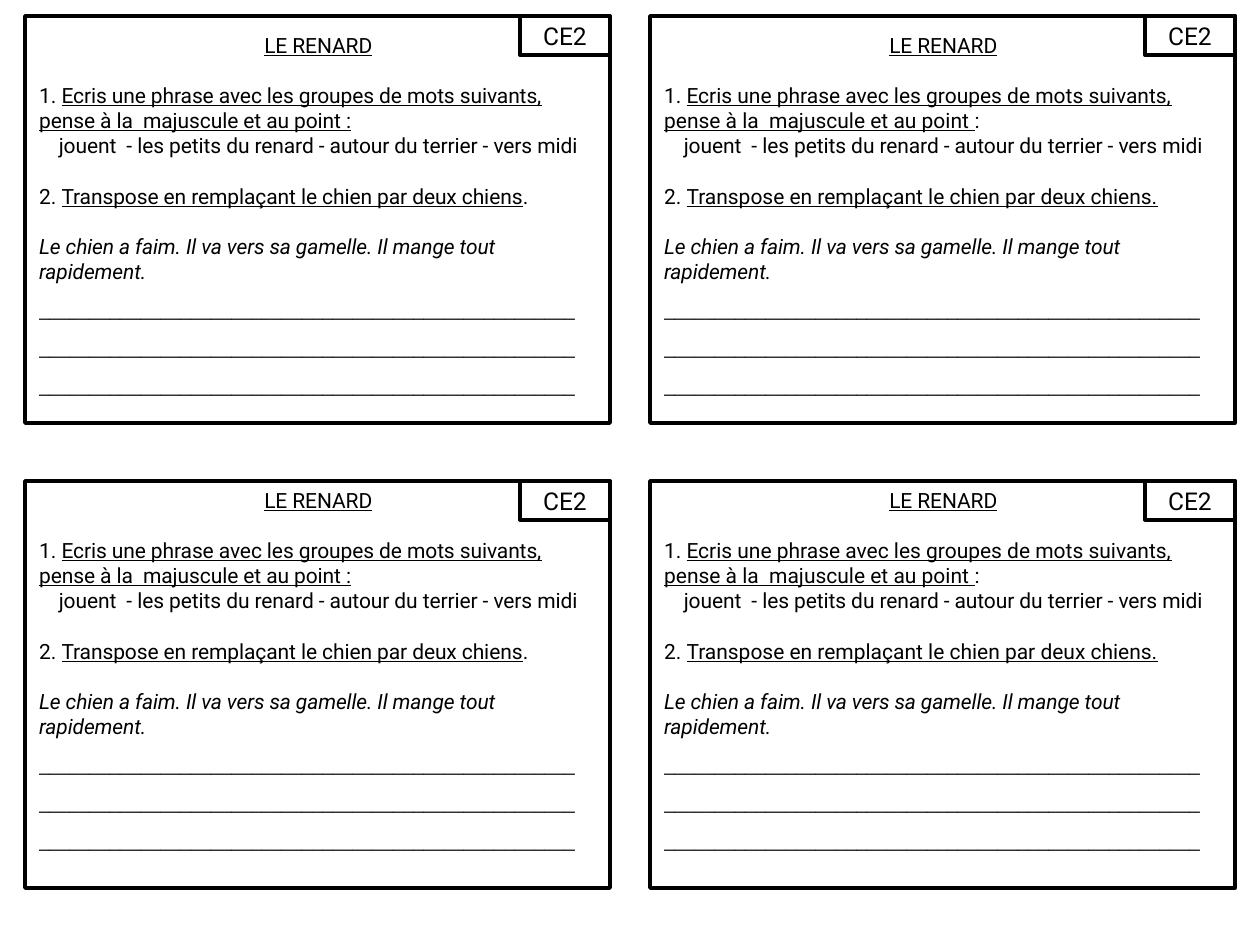
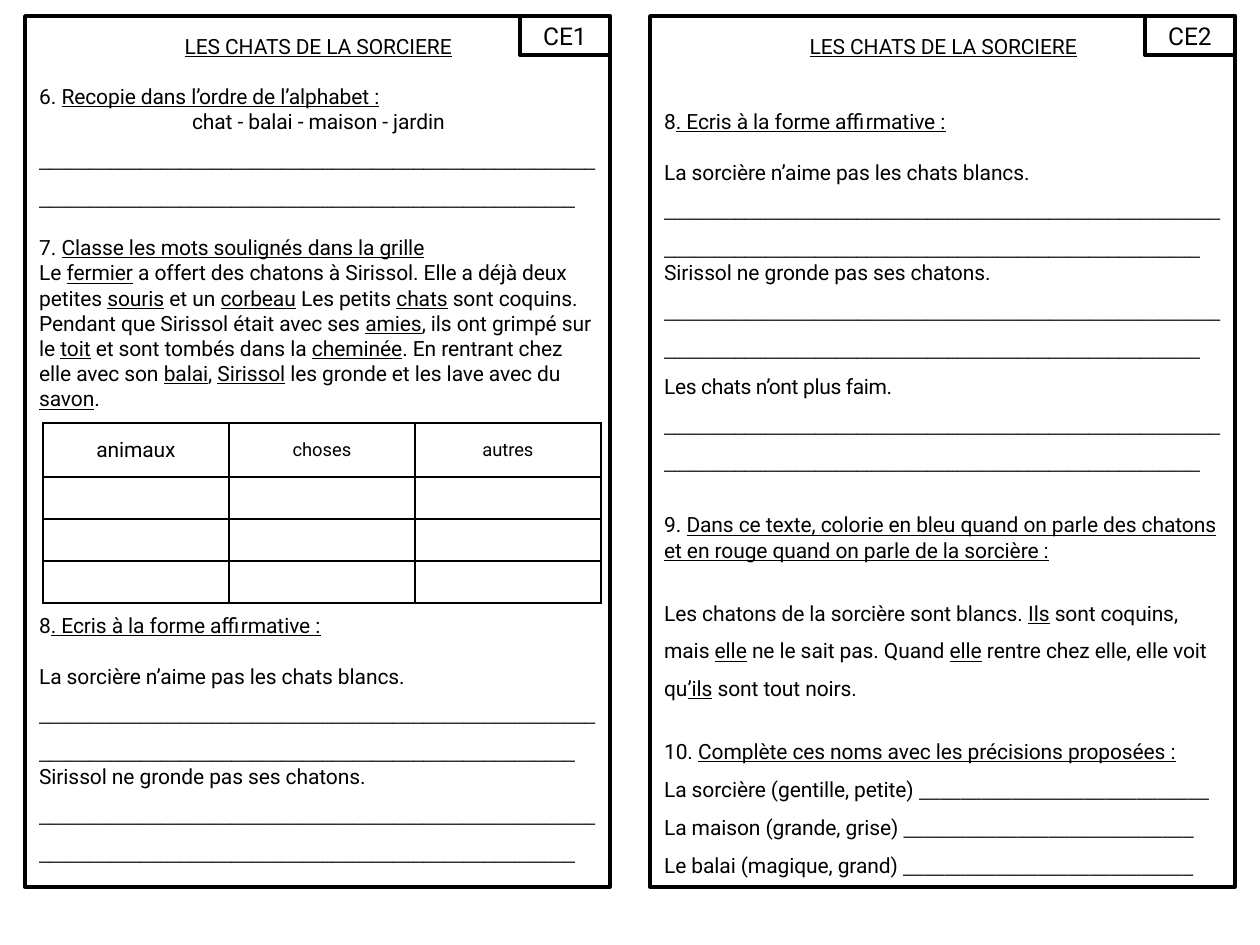
from itertools import groupby

from lxml import etree
from pptx import Presentation
from pptx import util as u
from pptx.dml.color import RGBColor
from pptx.enum import shapes, text
from pptx.oxml.ns import qn

# Content: [..] is underlined, {..} is underlined without tightened spacing.
# Each paragraph is (style, text, blank lines left above it).
SHORT_RULE = "_" * 53
LONG_RULE = "_" * 108
BLANK = "_" * 28


def fox_exercise(instruction, transposition):
    return [
        ("center", "[LE RENARD]", 0),
        ("body", instruction, 1),
        ("center", "jouent  - les petits du renard - autour du terrier - vers midi", 0),
        ("body", transposition, 1),
        ("italic", "Le chien a faim. Il va vers sa gamelle. Il mange tout rapidement.", 1),
    ] + [("rule", SHORT_RULE, 0)] * 3


FOX_LEFT = fox_exercise(
    "1. [Ecris une phrase avec les groupes de mots suivants, pense à la  majuscule et au point :]",
    "2. [Transpose en remplaçant le chien par deux chiens].")
FOX_RIGHT = fox_exercise(
    "1. {Ecris une phrase avec les groupes de mots suivants, pense à la  majuscule et au point }:",
    "2. {Transpose en remplaçant le chien par deux chiens.}")

CATS_TITLE = ("center", "[LES CHATS DE LA SORCIERE]", 0)
AFFIRMATIVE = [
    ("body", "La sorcière n’aime pas les chats blancs.", 1),
    ("rule", LONG_RULE, 0),
    ("body", "Sirissol ne gronde pas ses chatons.", 0),
    ("rule", LONG_RULE, 0),
]
AFFIRMATIVE_HEADING = "8[. Ecris à la forme affirmative :]"

CATS_CE1 = [
    CATS_TITLE,
    ("body", "6. [Recopie dans l’ordre de l’alphabet :]", 1),
    ("center", "chat - balai - maison - jardin", 0),
    ("rule", LONG_RULE, 0),
    ("body", "7. [Classe les mots soulignés dans la grille]", 1),
    ("body", "Le [fermier] a offert des chatons à Sirissol. Elle a déjà deux petites "
             "[souris] et un [corbeau] Les petits [chats] sont coquins. Pendant que "
             "Sirissol était avec ses [amies], ils ont grimpé sur le [toit] et sont "
             "tombés dans la [cheminée]. En rentrant chez elle avec son [balai], "
             "[Sirissol] les gronde et les lave avec du [savon].", 0),
    ("body", AFFIRMATIVE_HEADING, 8),
] + AFFIRMATIVE

CATS_CE2 = [CATS_TITLE, ("body", AFFIRMATIVE_HEADING, 2)] + AFFIRMATIVE + [
    ("rule", "Les chats n’ont plus faim.", 0),
    ("rule", LONG_RULE, 0),
    ("body", "9. [Dans ce texte, colorie en bleu quand on parle des chatons et en rouge "
             "quand on parle de la sorcière :]", 1.5),
    ("open", "Les chatons de la sorcière sont blancs. [Ils] sont coquins, mais [elle] ne "
             "le sait pas. Quand [elle] rentre chez elle, elle voit qu[’ils] sont tout noirs.", 1),
    ("open", "10. [Complète ces noms avec les précisions proposées :]", 1),
    ("open", "La sorcière (gentille, petite) " + BLANK, 0),
    ("open", "La maison (grande, grise) " + BLANK, 0),
    ("open", "Le balai (magique, grand) " + BLANK, 0),
]
WORD_GRID = [("animaux", 12, -5), ("choses", 10.5, 0), ("autres", 10.5, 0)]

# Look
COLORS = {"ink": "000000", "paper": "FFFFFF"}
FONT, RULE_FONT = "Roboto", "Calibri"
LINE_POINTS = 14.4
# style: (alignment, line spacing, italic, letter spacing)
LEFT, CENTER = text.PP_ALIGN.LEFT, text.PP_ALIGN.CENTER
STYLES = {
    "body": (LEFT, 1.0, False, -5),
    "center": (CENTER, 1.0, False, -5),
    "italic": (LEFT, 1.0, True, -5),
    "open": (LEFT, 1.5, False, -5),
    "rule": (LEFT, 1.5, False, -20),
}

# Layout in px
SCALE = 914400 / 126
COLUMNS = (25, 650)
ROWS = (16, 481)
CARD_WIDTH, SHORT_CARD, TALL_CARD = 585, 407, 871
BADGE_WIDTH, BADGE_HEIGHT = 90, 39
GRID_LEFT, GRID_TOP, GRID_COLUMN = 43, 423, 186
GRID_ROWS = (54, 42, 42, 42)


def px(*lengths):
    return [u.Emu(round(length * SCALE)) for length in lengths]


def color(name):
    return RGBColor.from_string(COLORS[name])


def format_run(run, size, spacing=0, font=FONT):
    run.font.size = u.Pt(size)
    run.font.name = font
    run.font.color.rgb = color("ink")
    if spacing:
        run._r.get_or_add_rPr().set("spc", str(spacing))


def split_runs(marked):
    """Yield (text, mark, is_blank) for each stretch of like characters."""
    mark, characters = "", []
    for character in marked:
        if character in "[{":
            mark = character
        elif character in "]}":
            mark = ""
        else:
            characters.append((character, mark, character == "_"))
    for (mark, is_blank), group in groupby(characters, key=lambda item: item[1:]):
        yield "".join(item[0] for item in group), mark, is_blank


def add_box(slide, left, top, width, height):
    box = slide.shapes.add_shape(shapes.MSO_SHAPE.RECTANGLE, *px(left, top, width, height))
    box.shadow.inherit = False
    box.fill.solid()
    box.fill.fore_color.rgb = color("paper")
    box.line.color.rgb = color("ink")
    box.line.width = u.Pt(2)
    return box


def add_exercises(slide, paragraphs, left, top, height):
    frame = slide.shapes.add_textbox(*px(left, top, CARD_WIDTH, height)).text_frame
    frame.word_wrap = True
    for index, (style, marked, blank_lines) in enumerate(paragraphs):
        paragraph = frame.add_paragraph() if index else frame.paragraphs[0]
        alignment, line_spacing, italic, spacing = STYLES[style]
        paragraph.alignment = alignment
        paragraph.line_spacing = line_spacing
        paragraph.space_before = u.Pt(blank_lines * LINE_POINTS)
        paragraph._p.get_or_add_pPr().set("marL", str(u.Pt(1)))
        for content, mark, is_blank in split_runs(marked):
            run = paragraph.add_run()
            run.text = content
            format_run(run, 12, 0 if mark == "{" else spacing,
                       RULE_FONT if is_blank else FONT)
            run.font.underline = bool(mark)
            run.font.italic = italic


def add_card(slide, level, paragraphs, left, top, height, text_offset):
    add_box(slide, left, top, CARD_WIDTH, height)
    add_exercises(slide, paragraphs, left, top + text_offset, height - text_offset)
    badge = add_box(slide, left + CARD_WIDTH - BADGE_WIDTH, top, BADGE_WIDTH, BADGE_HEIGHT)
    frame = badge.text_frame
    frame.text = level
    frame.vertical_anchor = text.MSO_ANCHOR.MIDDLE
    frame.paragraphs[0].alignment = CENTER
    format_run(frame.paragraphs[0].runs[0], 14)


def format_cell(cell):
    cell.fill.background()
    cell.margin_top = cell.margin_bottom = 0
    cell.vertical_anchor = text.MSO_ANCHOR.MIDDLE
    properties = cell._tc.get_or_add_tcPr()
    for index, side in enumerate(("lnL", "lnR", "lnT", "lnB")):
        border = etree.Element(qn("a:" + side), w=str(u.Pt(1)))
        fill = etree.SubElement(border, qn("a:solidFill"))
        etree.SubElement(fill, qn("a:srgbClr"), val=COLORS["ink"])
        properties.insert(index, border)


def add_word_grid(slide):
    count = len(WORD_GRID)
    table = slide.shapes.add_table(
        len(GRID_ROWS), count,
        *px(GRID_LEFT, GRID_TOP, GRID_COLUMN * count, sum(GRID_ROWS))).table
    table.first_row = table.horz_banding = False
    for column, width in zip(table.columns, px(*[GRID_COLUMN] * count)):
        column.width = width
    for row, height in zip(table.rows, px(*GRID_ROWS)):
        row.height = height
        for cell in row.cells:
            format_cell(cell)
    for cell, (heading, size, spacing) in zip(table.rows[0].cells, WORD_GRID):
        cell.text_frame.text = heading
        paragraph = cell.text_frame.paragraphs[0]
        paragraph.alignment = CENTER
        format_run(paragraph.runs[0], size, spacing)


def main():
    presentation = Presentation()
    presentation.slide_width, presentation.slide_height = px(1260, 945)
    blank_layout = presentation.slide_layouts[6]

    # Slide 1: the same pair of cards on two rows
    slide = presentation.slides.add_slide(blank_layout)
    for top, text_offset in zip(ROWS, (10, 0)):
        for left, exercises in zip(COLUMNS, (FOX_LEFT, FOX_RIGHT)):
            add_card(slide, "CE2", exercises, left, top, SHORT_CARD, text_offset)

    # Slide 2: one tall card for each level
    slide = presentation.slides.add_slide(blank_layout)
    for left, level, exercises in zip(COLUMNS, ("CE1", "CE2"), (CATS_CE1, CATS_CE2)):
        add_card(slide, level, exercises, left, ROWS[0], TALL_CARD, 11)
    add_word_grid(slide)

    presentation.save("out.pptx")


if __name__ == "__main__":
    main()
